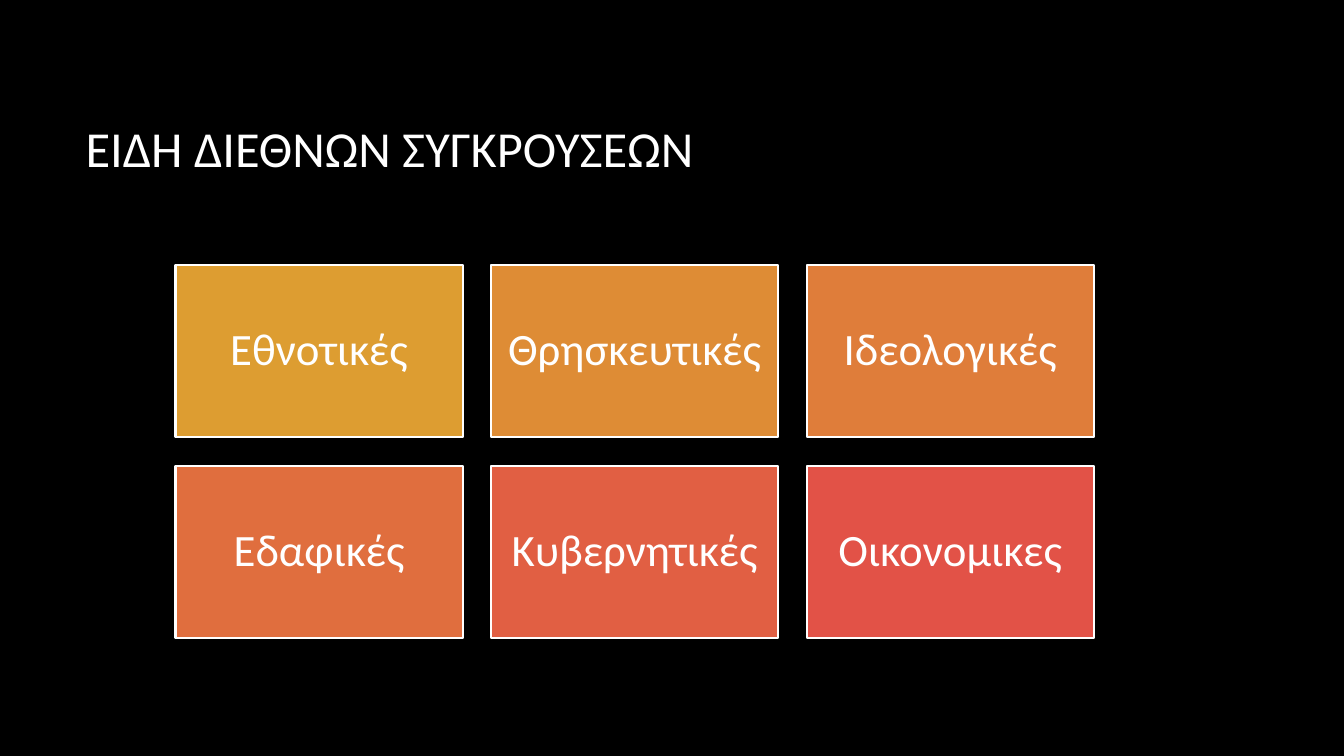
from dataclasses import dataclass

from pptx import Presentation
from pptx.dml.color import RGBColor
from pptx.enum.shapes import MSO_SHAPE
from pptx.enum.text import MSO_ANCHOR, PP_ALIGN
from pptx.shapes.autoshape import Shape
from pptx.slide import Slide
from pptx.util import Inches, Pt

RECT = MSO_SHAPE.RECTANGLE
MIDDLE = MSO_ANCHOR.MIDDLE
LEFT, CENTER = PP_ALIGN.LEFT, PP_ALIGN.CENTER

FONT = "Calibri"
WHITE, BLACK = "FFFFFF", "000000"

# Grid of conflict types
COLS = 3
GRID_X, GRID_Y = 1.74, 2.63
TILE_W, TILE_H = 2.85, 1.71
STEP_X, STEP_Y = 3.13, 1.99
INSET = 0.13


@dataclass
class Tile:
    label: str
    fill: str


TILES = [
    Tile("Εθνοτικές", "DD9D31"),
    Tile("Θρησκευτικές", "DE8C35"),
    Tile("Ιδεολογικές", "DF7D3A"),
    Tile("Εδαφικές", "E06E3E"),
    Tile("Κυβερνητικές", "E15F43"),
    Tile("Οικονομικες", "E25247"),
]


def color(code: str) -> RGBColor:
    return RGBColor.from_string(code)


def write(shape: Shape, text: str, size: int, align: PP_ALIGN) -> None:
    frame = shape.text_frame
    frame.word_wrap = True
    frame.vertical_anchor = MIDDLE
    para = frame.paragraphs[0]
    para.alignment = align
    run = para.add_run()
    run.text = text
    run.font.name = FONT
    run.font.size = Pt(size)
    run.font.color.rgb = color(WHITE)


def add_title(slide: Slide, text: str) -> None:
    box = slide.shapes.add_textbox(
        Inches(0.75), Inches(0.67), Inches(11.08), Inches(1.59))
    write(box, text, 36, LEFT)


def add_tile(slide: Slide, tile: Tile, row: int, col: int) -> None:
    shape = slide.shapes.add_shape(
        RECT, Inches(GRID_X + col * STEP_X), Inches(GRID_Y + row * STEP_Y),
        Inches(TILE_W), Inches(TILE_H))
    shape.shadow.inherit = False
    shape.fill.solid()
    shape.fill.fore_color.rgb = color(tile.fill)
    shape.line.color.rgb = color(WHITE)
    shape.line.width = Pt(1.5)
    frame = shape.text_frame
    frame.margin_left = frame.margin_right = Inches(INSET)
    frame.margin_top = frame.margin_bottom = Inches(INSET)
    write(shape, tile.label, 32, CENTER)
    frame.paragraphs[0].line_spacing = 0.9


def main() -> None:
    deck = Presentation()
    deck.slide_width, deck.slide_height = Inches(13.33), Inches(7.5)
    slide = deck.slides.add_slide(deck.slide_layouts[6])

    # Background
    back = slide.background.fill
    back.solid()
    back.fore_color.rgb = color(BLACK)

    # Title and tiles
    add_title(slide, "ΕΙΔΗ ΔΙΕΘΝΩΝ ΣΥΓΚΡΟΥΣΕΩΝ")
    for index, tile in enumerate(TILES):
        add_tile(slide, tile, *divmod(index, COLS))

    deck.save("out.pptx")


if __name__ == "__main__":
    main()
